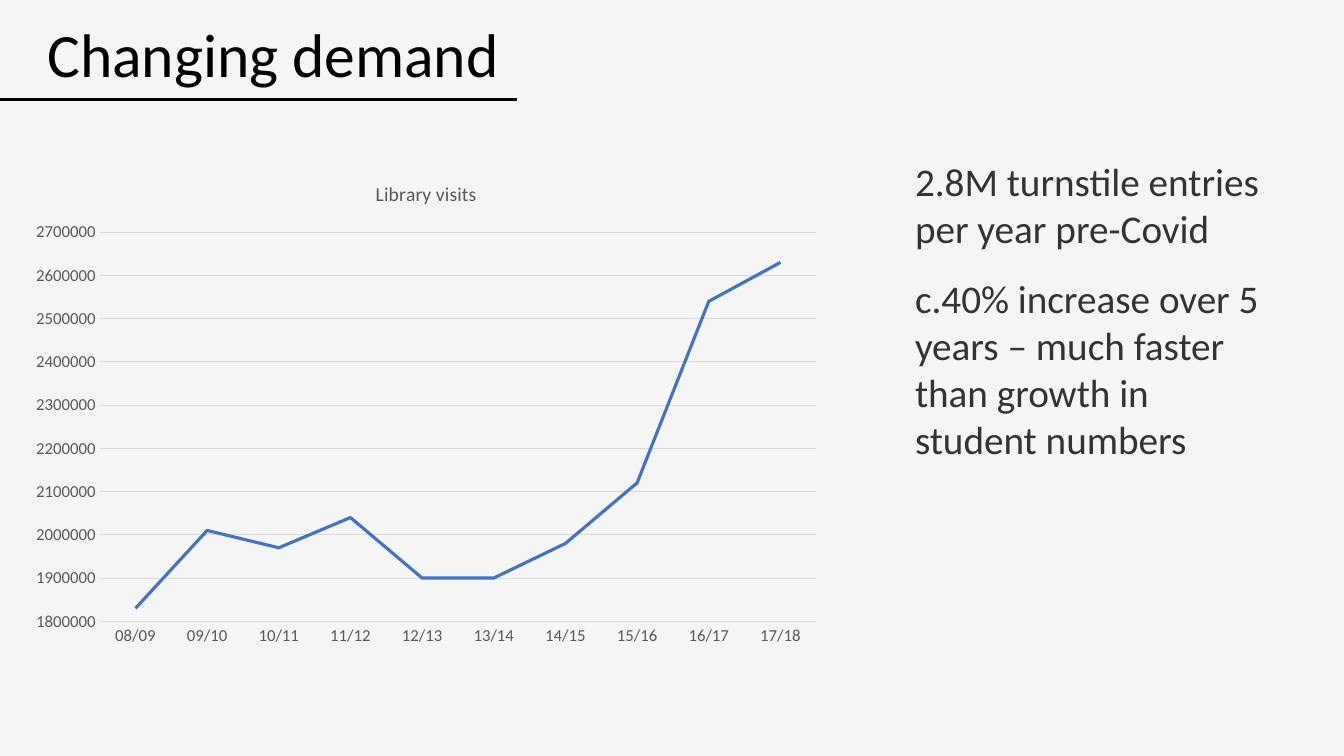
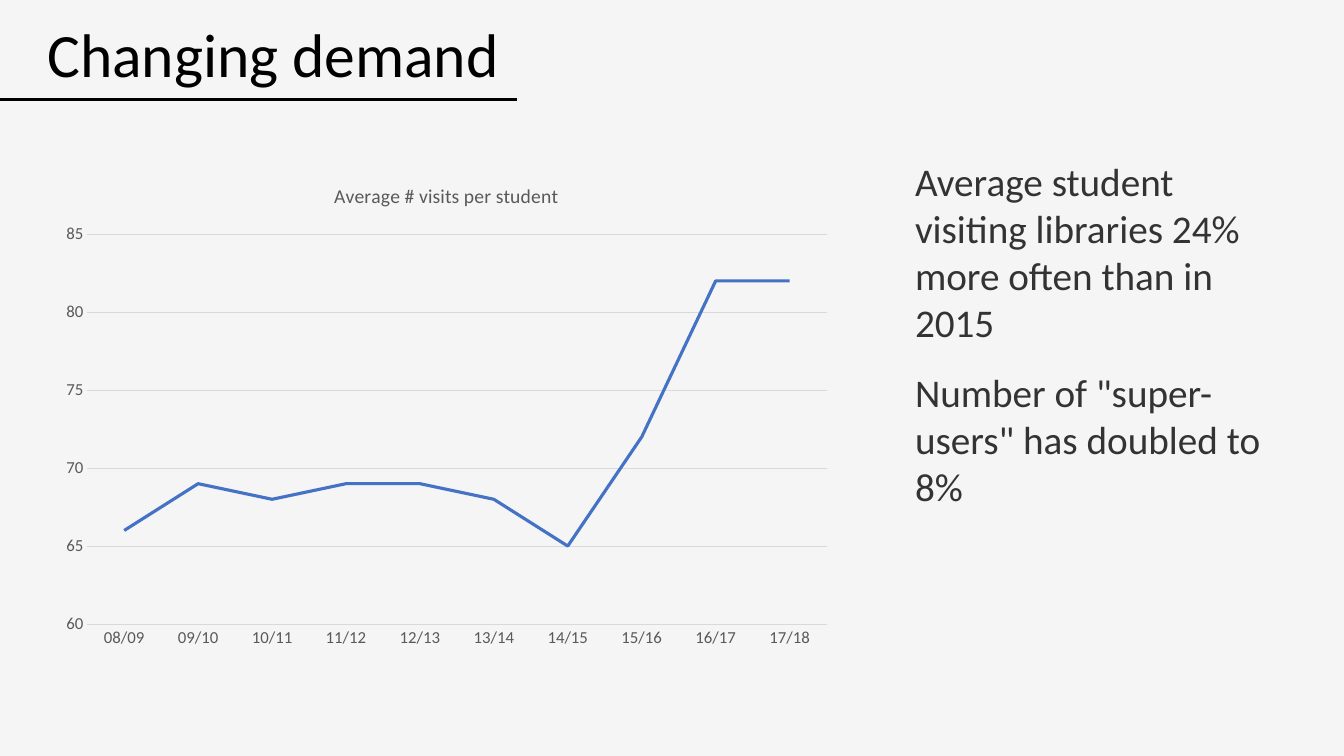
from dataclasses import dataclass

from lxml import etree
from pptx import Presentation
from pptx.chart.data import CategoryChartData
from pptx.dml.color import RGBColor
from pptx.enum.chart import XL_CHART_TYPE, XL_TICK_MARK
from pptx.enum.shapes import MSO_CONNECTOR
from pptx.enum.text import MSO_ANCHOR
from pptx.oxml.ns import qn
from pptx.slide import Slide
from pptx.text.text import Font
from pptx.util import Cm, Pt

# Shared style
FONT = "Calibri"
BACKGROUND = RGBColor(0xF5, 0xF5, 0xF5)
BLACK = RGBColor(0x00, 0x00, 0x00)
BODY_GREY = RGBColor(0x33, 0x33, 0x33)
CHART_GREY = RGBColor(0x59, 0x59, 0x59)
GRID_GREY = RGBColor(0xD9, 0xD9, 0xD9)
LINE_BLUE = RGBColor(0x44, 0x72, 0xC4)

LINE_CHART = XL_CHART_TYPE.LINE
NO_TICK = XL_TICK_MARK.NONE
STRAIGHT = MSO_CONNECTOR.STRAIGHT
MIDDLE = MSO_ANCHOR.MIDDLE

BLANK_LAYOUT = 6
TITLE = "Changing demand"
YEARS = [f"{year:02d}/{year + 1:02d}" for year in range(8, 18)]


@dataclass(frozen=True)
class DemandChart:
    title: str
    visits: tuple[int, ...]
    axis_range: tuple[int, int]
    axis_step: int
    box: tuple[Cm, Cm, Cm, Cm]


@dataclass(frozen=True)
class DemandSlide:
    chart: DemandChart
    findings: tuple[str, ...]


SLIDES = (
    DemandSlide(
        DemandChart(
            "Library visits",
            (1830000, 2010000, 1970000, 2040000, 1900000,
             1900000, 1980000, 2120000, 2540000, 2630000),
            (1800000, 2700000), 100000,
            (Cm(0.5), Cm(4.06), Cm(20.48), Cm(12.45)),
        ),
        ("2.8M turnstile entries per year pre-Covid",
         "c.40% increase over 5 years – much faster than growth in "
         "student numbers"),
    ),
    DemandSlide(
        DemandChart(
            "Average # visits per student",
            (66, 69, 68, 69, 69, 68, 65, 72, 82, 82),
            (60, 85), 5,
            (Cm(1.27), Cm(4.11), Cm(19.96), Cm(12.47)),
        ),
        ("Average student visiting libraries 24% more often than in 2015",
         'Number of "super-users" has doubled to 8%'),
    ),
)


def style_font(font: Font, size: float, color: RGBColor) -> None:
    font.name = FONT
    font.size = Pt(size)
    font.bold = False
    font.color.rgb = color


def add_heading(slide: Slide) -> None:
    # Rule under the title
    rule = slide.shapes.add_connector(STRAIGHT, Cm(0), Cm(2.5), Cm(13.03), Cm(2.5))
    rule.line.color.rgb = BLACK
    rule.line.width = Pt(2.25)
    etree.SubElement(rule._element.spPr, qn("a:effectLst"))

    # Title
    frame = slide.shapes.add_textbox(Cm(0.94), Cm(0.38), Cm(29.21), Cm(2.13)).text_frame
    frame.word_wrap = True
    frame.vertical_anchor = MIDDLE
    paragraph = frame.paragraphs[0]
    paragraph.line_spacing = 0.9
    run = paragraph.add_run()
    run.text = TITLE
    style_font(run.font, 44, BLACK)


def add_findings(slide: Slide, findings: tuple[str, ...]) -> None:
    frame = slide.shapes.add_textbox(Cm(22.81), Cm(3.84), Cm(9.47), Cm(13.74)).text_frame
    frame.word_wrap = True
    for index, finding in enumerate(findings):
        paragraph = frame.add_paragraph() if index else frame.paragraphs[0]
        paragraph.space_before = Pt(10 if index else 0)
        paragraph.space_after = Pt(6)
        run = paragraph.add_run()
        run.text = finding
        style_font(run.font, 28, BODY_GREY)


def add_demand_chart(slide: Slide, demand: DemandChart) -> None:
    data = CategoryChartData()
    data.categories = YEARS
    data.add_series(demand.title, demand.visits)
    chart = slide.shapes.add_chart(LINE_CHART, *demand.box, data).chart
    style_font(chart.font, 10, BLACK)
    chart.has_legend = False

    # Chart title
    chart.has_title = True
    chart.chart_title.include_in_layout = False
    run = chart.chart_title.text_frame.paragraphs[0].add_run()
    run.text = demand.title
    style_font(run.font, 14, CHART_GREY)

    # Axes and gridlines
    year_axis, visit_axis = chart.category_axis, chart.value_axis
    for axis in (year_axis, visit_axis):
        axis.major_tick_mark = axis.minor_tick_mark = NO_TICK
        style_font(axis.tick_labels.font, 12, CHART_GREY)
    visit_axis.minimum_scale, visit_axis.maximum_scale = demand.axis_range
    visit_axis.major_unit = demand.axis_step
    visit_axis.format.line.fill.background()
    for line in (year_axis.format.line, visit_axis.major_gridlines.format.line):
        line.color.rgb = GRID_GREY
        line.width = Pt(0.75)

    # Series
    plot = chart.plots[0]
    plot.vary_by_categories = False
    series = plot.series[0]
    series.smooth = False
    series.format.line.color.rgb = LINE_BLUE
    series.format.line.width = Pt(2.25)


def main() -> None:
    deck = Presentation()
    deck.slide_width, deck.slide_height = Cm(33.87), Cm(19.05)
    master_fill = deck.slide_master.background.fill
    master_fill.solid()
    master_fill.fore_color.rgb = BACKGROUND
    for content in SLIDES:
        slide = deck.slides.add_slide(deck.slide_layouts[BLANK_LAYOUT])
        add_heading(slide)
        add_findings(slide, content.findings)
        add_demand_chart(slide, content.chart)
    deck.save("out.pptx")


if __name__ == "__main__":
    main()
